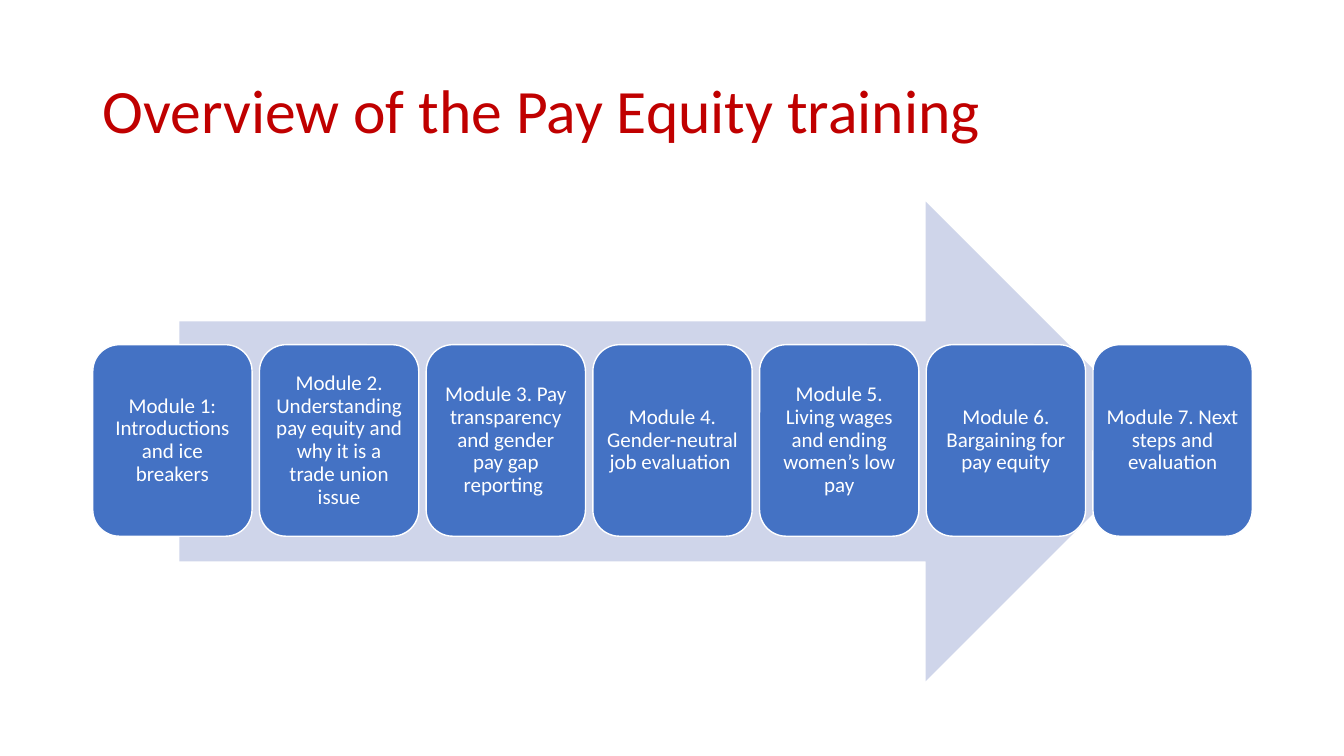
from dataclasses import dataclass

from pptx import Presentation
from pptx.dml.color import RGBColor
from pptx.enum.shapes import MSO_SHAPE
from pptx.enum.text import MSO_ANCHOR, PP_ALIGN
from pptx.util import Emu, Pt


@dataclass
class Theme:
    font: str = "Calibri"
    title_size: int = 44
    module_size: int = 15
    title: str = "C00000"
    arrow: str = "CFD5EA"
    module: str = "4472C4"
    white: str = "FFFFFF"


theme = Theme()
EMU_PER_PX = 9144


def px(length):
    return Emu(round(length * EMU_PER_PX))


def write(shape, text, size, color, align):
    frame = shape.text_frame
    frame.text = text
    frame.word_wrap = True
    frame.vertical_anchor = MSO_ANCHOR.MIDDLE
    para = frame.paragraphs[0]
    para.alignment = align
    para.line_spacing = 0.9
    span = para.runs[0]
    span.font.name = theme.font
    span.font.size = Pt(size)
    span.font.color.rgb = RGBColor.from_string(color)


deck = Presentation()
deck.slide_width = px(1333)
deck.slide_height = px(750)
page = deck.slides.add_slide(deck.slide_layouts[6])

left, span_width = 92, 1150
title = page.shapes.add_textbox(px(left), px(40), px(span_width), px(145))
write(title, "Overview of the Pay Equity training", theme.title_size, theme.title, PP_ALIGN.LEFT)

arrow = page.shapes.add_shape(MSO_SHAPE.RIGHT_ARROW, px(178), px(200), px(978), px(476))
arrow.shadow.inherit = False
arrow.fill.solid()
arrow.fill.fore_color.rgb = RGBColor.from_string(theme.arrow)
arrow.line.fill.background()

modules = [
    "Module 1: Introductions and ice breakers",
    "Module 2. Understanding pay equity and why it is a trade union issue",
    "Module 3. Pay transparency and gender pay gap reporting ",
    "Module 4. Gender-neutral job evaluation ",
    "Module 5. Living wages and ending women’s low pay",
    "Module 6. Bargaining for pay equity",
    "Module 7. Next steps and evaluation",
]
module_width, module_height = 158, 190
module_top, inset = 342, 6
pitch = (span_width - module_width) / (len(modules) - 1)

for index, text in enumerate(modules):
    box = page.shapes.add_shape(
        MSO_SHAPE.ROUNDED_RECTANGLE,
        px(left + index * pitch), px(module_top), px(module_width), px(module_height),
    )
    box.shadow.inherit = False
    box.fill.solid()
    box.fill.fore_color.rgb = RGBColor.from_string(theme.module)
    box.line.color.rgb = RGBColor.from_string(theme.white)
    box.line.width = Pt(1)
    frame = box.text_frame
    frame.margin_left = frame.margin_right = px(inset)
    frame.margin_top = frame.margin_bottom = px(inset)
    write(box, text, theme.module_size, theme.white, PP_ALIGN.CENTER)

deck.save("out.pptx")
